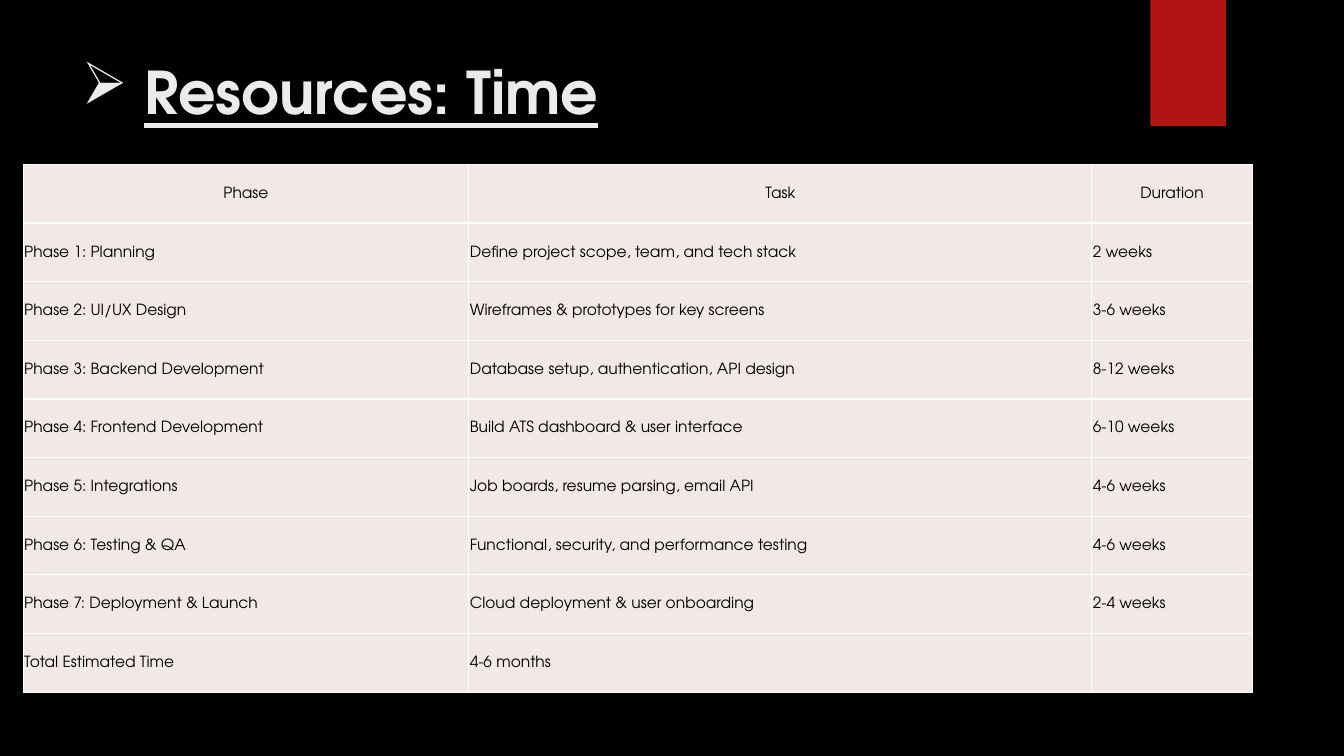
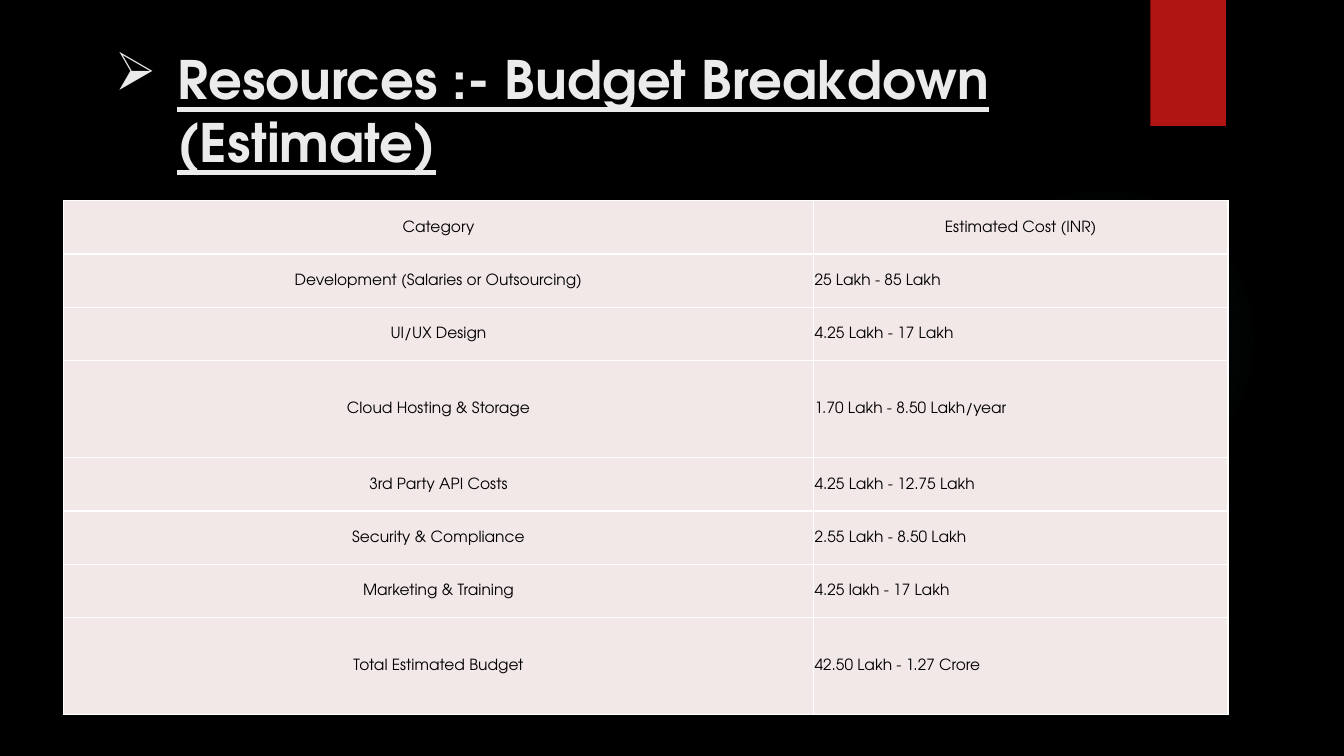
from lxml import etree
from pptx import Presentation
from pptx.dml.color import RGBColor
from pptx.enum.shapes import MSO_SHAPE as Preset
from pptx.enum.text import MSO_ANCHOR as Anchor, MSO_AUTO_SIZE as AutoSize, PP_ALIGN as Align
from pptx.oxml import parse_xml
from pptx.oxml.ns import nsdecls, qn
from pptx.util import Inches, Pt

FONT = "TeX Gyre Adventor"
BLACK = RGBColor(0x00, 0x00, 0x00)
RED = RGBColor(0xB0, 0x15, 0x13)
TEAL = RGBColor(0x50, 0xB9, 0xC1)
TITLE_GREY = RGBColor(0xEB, 0xEB, 0xEB)
CELL_PINK = RGBColor(0xF2, 0xE8, 0xE7)
WHITE = RGBColor(0xFF, 0xFF, 0xFF)

GLOW_STOPS = [(0, 7), (36, 6), (69, 0)]
TITLE_FORMAT = {"name": FONT, "bold": True, "underline": True}
CELL_FORMAT = {"name": FONT, "size": Pt(11)}
TITLE_INDENT = Inches(0.62)

SLIDES = [
    {
        "title": "Resources: Time",
        "title_box": (0.71, 0.5, 10.29, 1.53),
        "title_size": 42,
        "table_at": (0.23, 1.63),
        "columns": [4.42, 6.18, 1.59],
        "row_heights": [5.24 / 9] * 9,
        "alignments": [Align.LEFT, Align.LEFT, Align.LEFT],
        "rows": [
            ("Phase", "Task", "Duration"),
            ("Phase 1: Planning", "Define project scope, team, and tech stack", "2 weeks"),
            ("Phase 2: UI/UX Design", "Wireframes & prototypes for key screens", "3-6 weeks"),
            ("Phase 3: Backend Development", "Database setup, authentication, API design", "8-12 weeks"),
            ("Phase 4: Frontend Development", "Build ATS dashboard & user interface", "6-10 weeks"),
            ("Phase 5: Integrations", "Job boards, resume parsing, email API", "4-6 weeks"),
            ("Phase 6: Testing & QA", "Functional, security, and performance testing", "4-6 weeks"),
            ("Phase 7: Deployment & Launch", "Cloud deployment & user onboarding", "2-4 weeks"),
            ("Total Estimated Time", "4-6 months", ""),
        ],
    },
    {
        "title": "Resources :- Budget Breakdown (Estimate)",
        "title_box": (1.04, 0.41, 11.5, 1.45),
        "title_size": 37.8,
        "table_at": (0.63, 1.99),
        "columns": [7.44, 4.11],
        "row_heights": [0.53, 0.53, 0.53, 0.96] * 2,
        "alignments": [Align.CENTER, Align.LEFT],
        "rows": [
            ("Category", "Estimated Cost (INR)"),
            ("Development (Salaries or Outsourcing)", "25 Lakh - 85 Lakh"),
            ("UI/UX Design", "4.25 Lakh - 17 Lakh"),
            ("Cloud Hosting & Storage", "1.70 Lakh - 8.50 Lakh/year"),
            ("3rd Party API Costs", "4.25 Lakh - 12.75 Lakh"),
            ("Security & Compliance", "2.55 Lakh - 8.50 Lakh"),
            ("Marketing & Training", "4.25 lakh - 17 Lakh"),
            ("Total Estimated Budget", "42.50 Lakh - 1.27 Crore"),
        ],
    },
]


def format_font(font, values, color):
    for name, value in values.items():
        setattr(font, name, value)
    font.color.rgb = color


def add_plain_shape(slide, preset, box, color):
    shape = slide.shapes.add_shape(preset, *map(Inches, box))
    shape.shadow.inherit = False
    shape.fill.solid()
    shape.fill.fore_color.rgb = color
    shape.line.fill.background()
    return shape


def set_glow(shape):
    stops = "".join(
        f'<a:gs pos="{position * 1000}"><a:srgbClr val="{TEAL}">'
        f'<a:alpha val="{opacity * 1000}"/></a:srgbClr></a:gs>'
        for position, opacity in GLOW_STOPS
    )
    gradient = parse_xml(
        f'<a:gradFill {nsdecls("a")} rotWithShape="1"><a:gsLst>{stops}</a:gsLst>'
        '<a:path path="circle"><a:fillToRect l="50000" t="50000" r="50000" b="50000"/>'
        "</a:path></a:gradFill>"
    )
    properties = shape.element.spPr
    properties.replace(properties.find(qn("a:solidFill")), gradient)


def decorate_layout(layout, slide):
    layout.background.fill.solid()
    layout.background.fill.fore_color.rgb = BLACK
    glow = add_plain_shape(slide, Preset.OVAL, (9.41, 1.83, 3.08, 3.08), TEAL)
    set_glow(glow)
    ribbon = add_plain_shape(slide, Preset.RECTANGLE, (11.41, 0, 0.75, 1.25), RED)
    for shape in (glow, ribbon):
        layout.shapes.element.append(shape.element)


def fill_title(title, content):
    title.left, title.top, title.width, title.height = map(Inches, content["title_box"])
    frame = title.text_frame
    frame.word_wrap = True
    frame.auto_size = AutoSize.NONE
    frame.vertical_anchor = Anchor.TOP
    paragraph = frame.paragraphs[0]
    paragraph.alignment = Align.LEFT
    properties = paragraph._p.get_or_add_pPr()
    properties.set("marL", str(TITLE_INDENT))
    properties.set("indent", str(-TITLE_INDENT))
    etree.SubElement(properties, qn("a:buChar")).set("char", "➢")
    run = paragraph.add_run()
    run.text = content["title"]
    format_font(run.font, {**TITLE_FORMAT, "size": Pt(content["title_size"])}, TITLE_GREY)


def fill_cell(cell, text, alignment):
    cell.margin_left = cell.margin_right = cell.margin_top = Inches(0.01)
    cell.margin_bottom = 0
    cell.vertical_anchor = Anchor.MIDDLE
    properties = cell._tc.get_or_add_tcPr()
    for side in ("lnL", "lnR", "lnT", "lnB"):
        properties.append(parse_xml(
            f'<a:{side} {nsdecls("a")} w="{Pt(1)}"><a:solidFill>'
            f'<a:srgbClr val="{WHITE}"/></a:solidFill></a:{side}>'
        ))
    cell.fill.solid()
    cell.fill.fore_color.rgb = CELL_PINK
    if text:
        paragraph = cell.text_frame.paragraphs[0]
        paragraph.alignment = alignment
        run = paragraph.add_run()
        run.text = text
        format_font(run.font, CELL_FORMAT, BLACK)


def add_content_table(slide, content):
    rows, widths, heights = content["rows"], content["columns"], content["row_heights"]
    box = (*content["table_at"], sum(widths), sum(heights))
    table = slide.shapes.add_table(len(rows), len(widths), *map(Inches, box)).table
    table.horz_banding = False
    for column, width in zip(table.columns, widths):
        column.width = Inches(width)
    for row, height in zip(table.rows, heights):
        row.height = Inches(height)
    for row_index, texts in enumerate(rows):
        for column_index, text in enumerate(texts):
            alignment = content["alignments"][column_index] if row_index else Align.CENTER
            fill_cell(table.cell(row_index, column_index), text, alignment)
    table.first_row = False


def main():
    presentation = Presentation()
    presentation.slide_width, presentation.slide_height = Inches(13.33), Inches(7.5)
    layout = presentation.slide_layouts.get_by_name("Title Only")
    for index, content in enumerate(SLIDES):
        slide = presentation.slides.add_slide(layout)
        if index == 0:
            decorate_layout(layout, slide)
        fill_title(slide.shapes.title, content)
        add_content_table(slide, content)
    presentation.save("out.pptx")


if __name__ == "__main__":
    main()
